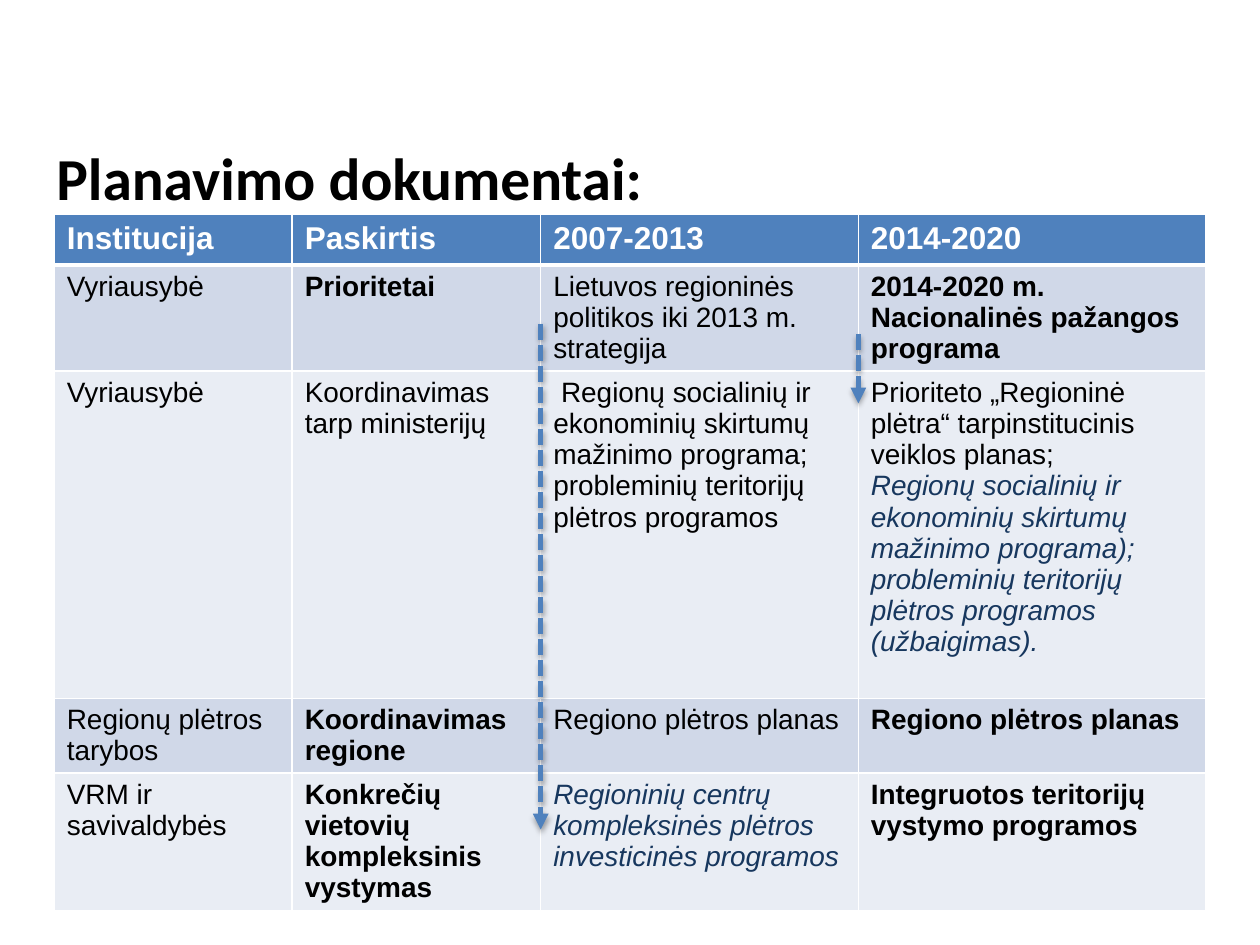
import pptx
import pptx.dml.color
import pptx.enum.dml
import pptx.enum.shapes
import pptx.enum.text
import pptx.oxml
import pptx.oxml.ns
import pptx.util

Pt = pptx.util.Pt
qn = pptx.oxml.ns.qn
NAMESPACE = pptx.oxml.ns.nsdecls("a")

BLUE, NAVY, BLACK, WHITE = "4F81BD", "17375E", "000000", "FFFFFF"
BANDS = ["D0D8E8", "E9EDF4"]
PLAIN, BOLD, NOTE = "plain", "bold", "note"


def color(value):
    return pptx.dml.color.RGBColor.from_string(value)


class PlanningPage:
    heading_font = "Calibri"
    table_font = "Arial"

    def __init__(self, deck):
        self.page = deck.slides.add_slide(deck.slide_layouts[1])

    def format(self, para, font, size, ink, bold=False, italic=False):
        for span in para.runs:
            span.font.name = font
            span.font.size = Pt(size)
            span.font.bold = bold
            span.font.italic = italic
            span.font.color.rgb = color(ink)

    def heading(self, text, left, top, width, height):
        title = self.page.shapes.title
        title.element.getparent().remove(title.element)
        box = self.page.placeholders[1]
        box.left, box.top, box.width, box.height = map(Pt, (left, top, width, height))
        frame = box.text_frame
        frame.text = text
        frame.auto_size = pptx.enum.text.MSO_AUTO_SIZE.NONE
        para = frame.paragraphs[0]
        para.alignment = pptx.enum.text.PP_ALIGN.JUSTIFY
        para.space_before = Pt(0)
        properties = para._p.get_or_add_pPr()
        properties.set("marL", str(Pt(27)))
        properties.set("indent", str(Pt(-27)))
        properties.append(pptx.oxml.parse_xml(f"<a:buNone {NAMESPACE}/>"))
        self.format(para, self.heading_font, 34, BLACK, bold=True)

    def borders(self, cell, top, bottom):
        properties = cell._tc.get_or_add_tcPr()
        sides = [("lnL", 1), ("lnR", 1), ("lnT", top), ("lnB", bottom)]
        for index, (side, width) in enumerate(sides):
            properties.insert(index, pptx.oxml.parse_xml(
                f'<a:{side} {NAMESPACE} w="{Pt(width)}"><a:solidFill>'
                f'<a:srgbClr val="{WHITE}"/></a:solidFill></a:{side}>'))

    def cell(self, cell, parts, row):
        cell.text_frame.text = "\n".join(text for text, look in parts)
        for para, (text, look) in zip(cell.text_frame.paragraphs, parts):
            if row == 0:
                self.format(para, self.table_font, 18, WHITE, bold=True)
            else:
                self.format(para, self.table_font, 16, NAVY if look == NOTE else BLACK,
                            bold=look == BOLD, italic=look == NOTE)
        cell.fill.solid()
        cell.fill.fore_color.rgb = color(BANDS[(row - 1) % 2] if row else BLUE)
        self.borders(cell, top=3 if row == 1 else 1, bottom=3 if row == 0 else 1)

    def table(self, rows, left, top, widths, heights):
        table = self.page.shapes.add_table(
            len(rows), len(widths), Pt(left), Pt(top),
            Pt(sum(widths)), Pt(sum(heights))).table
        for column, width in zip(table.columns, widths):
            column.width = Pt(width)
        for row, (texts, height) in enumerate(zip(rows, heights)):
            table.rows[row].height = Pt(height)
            for column, parts in enumerate(texts):
                self.cell(table.cell(row, column), parts, row)

    def down_arrow(self, x, top, bottom):
        arrow = self.page.shapes.add_connector(
            pptx.enum.shapes.MSO_CONNECTOR.STRAIGHT, Pt(x), Pt(top), Pt(x), Pt(bottom))
        arrow.line.color.rgb = color(BLUE)
        arrow.line.width = Pt(3)
        arrow.line.dash_style = pptx.enum.dml.MSO_LINE.SQUARE_DOT
        properties = arrow._element.spPr
        properties.find(qn("a:ln")).append(
            pptx.oxml.parse_xml(f'<a:tailEnd {NAMESPACE} type="triangle"/>'))
        properties.append(pptx.oxml.parse_xml(
            f'<a:effectLst {NAMESPACE}><a:outerShdw blurRad="{Pt(3.1)}" '
            f'dist="{Pt(1.8)}" dir="5400000" rotWithShape="0">'
            f'<a:srgbClr val="{BLACK}"><a:alpha val="35000"/></a:srgbClr>'
            '</a:outerShdw></a:effectLst>'))


# Each cell is a list of paragraphs: text and look
ROWS = [
    [[(name, BOLD)] for name in ("Institucija", "Paskirtis", "2007-2013", "2014-2020")],
    [[("Vyriausybė", PLAIN)],
     [("Prioritetai", BOLD)],
     [("Lietuvos regioninės politikos iki 2013 m. strategija", PLAIN)],
     [("2014-2020 m. Nacionalinės pažangos programa", BOLD)]],
    [[("Vyriausybė", PLAIN)],
     [("Koordinavimas tarp ministerijų", PLAIN)],
     [(" Regionų socialinių ir ekonominių skirtumų mažinimo programa; "
       "probleminių teritorijų plėtros programos", PLAIN)],
     [("Prioriteto „Regioninė plėtra“ tarpinstitucinis veiklos planas;", PLAIN),
      ("Regionų socialinių ir ekonominių skirtumų mažinimo programa); "
       "probleminių teritorijų plėtros programos (užbaigimas).", NOTE)]],
    [[("Regionų plėtros tarybos", PLAIN)],
     [("Koordinavimas regione", BOLD)],
     [("Regiono plėtros planas", PLAIN)],
     [("Regiono plėtros planas", BOLD)]],
    [[("VRM ir savivaldybės", PLAIN)],
     [("Konkrečių vietovių kompleksinis vystymas", BOLD)],
     [("Regioninių centrų kompleksinės plėtros investicinės programos", NOTE)],
     [("Integruotos teritorijų vystymo programos", BOLD)]],
]


def main():
    deck = pptx.Presentation()
    deck.slide_width, deck.slide_height = Pt(720), Pt(540)
    planning = PlanningPage(deck)

    # Heading
    planning.heading("Planavimo dokumentai:", 25, 77, 652, 361)

    # Table of planning documents
    left, widths = 31, [136, 142, 181.5, 198.5]
    planning.table(ROWS, left, 122.5, widths, [29, 60.5, 187, 42.5, 78.5])

    # Dashed arrows along the edges of the two period columns
    planning.down_arrow(left + sum(widths[:2]), 185, 474)
    planning.down_arrow(left + sum(widths[:3]), 191, 230.5)

    deck.save("out.pptx")


if __name__ == "__main__":
    main()
